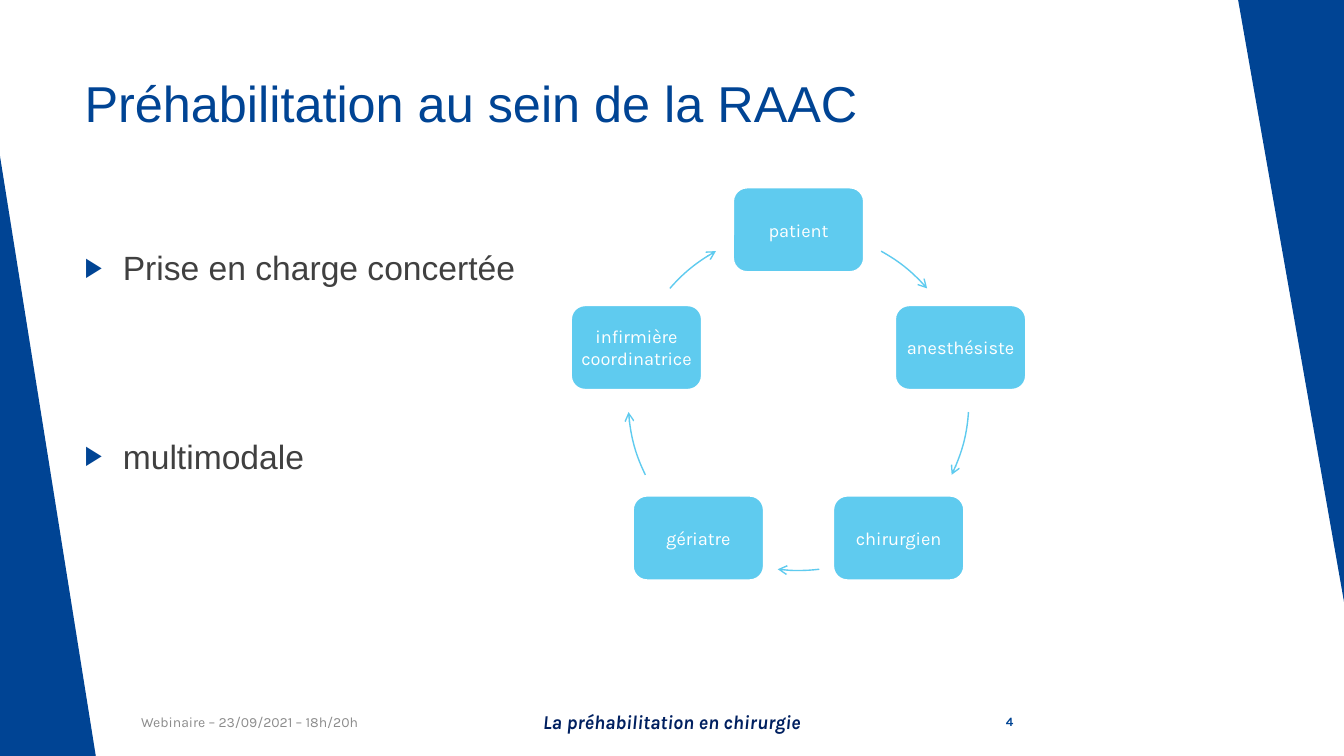
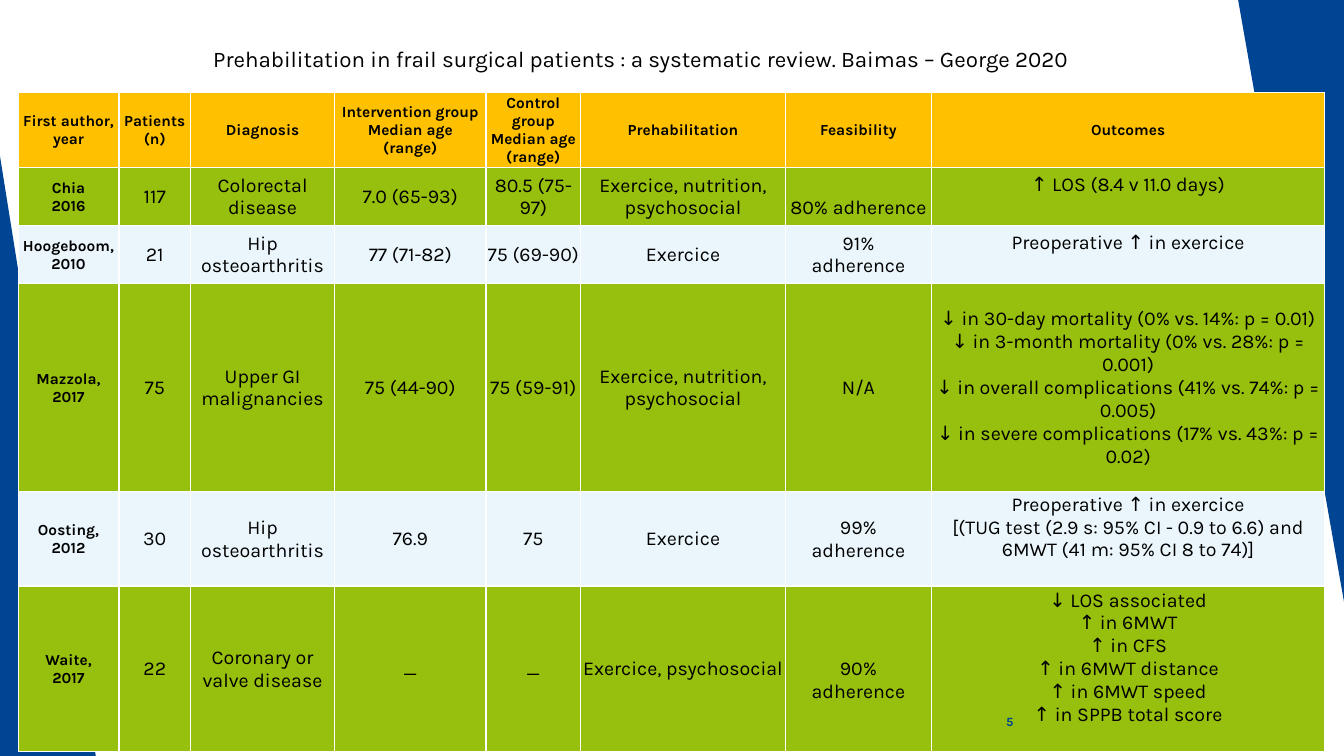
import math

import pptx
import pptx.dml.color
import pptx.enum.shapes
import pptx.enum.text
import pptx.oxml
import pptx.oxml.ns
import pptx.util

Inches = pptx.util.Inches
Pt = pptx.util.Pt
SHAPES = pptx.enum.shapes.MSO_SHAPE
ALIGN = pptx.enum.text.PP_ALIGN
ANCHOR = pptx.enum.text.MSO_ANCHOR

BLUE = "004494"
SKY = "5FCBEF"
WHITE = "FFFFFF"
BLACK = "000000"
AMBER = "FFC000"
GREEN = "97BF0D"
PALE = "EAF6FC"

TITLE = {"name": "Arial", "size": Pt(36), "colour": BLUE}
BULLET = {"name": "Arial", "size": Pt(24), "colour": "404040"}
PAGE = {"name": "Karla", "size": Pt(9), "bold": True, "colour": BLUE}
DATE = {"name": "Karla", "size": Pt(10), "colour": "8C8C8C"}
EVENT = {"name": "Karla", "size": Pt(14), "bold": True, "italic": True, "colour": "002060"}
NODE = {"name": "Karla", "size": Pt(13), "colour": WHITE}
CITATION = {"name": "Karla", "size": Pt(16), "colour": BLACK}
LABEL = {"name": "Karla", "size": Pt(11), "bold": True, "colour": BLACK}
VALUE = {"name": "Karla", "size": Pt(14), "bold": False, "colour": BLACK}

FOOTER_TOP = 6.96
FOOTER_HEIGHT = 0.4
CYCLE_CENTRE = (7.92, 3.97)
CYCLE_RADIUS = 1.69
NODE_SIZE = (1.3, 0.84)
TEAM = ["patient", "anesthésiste", "chirurgien", "gériatre", "infirmière coordinatrice"]
ARROW_ANGLES = [(299, 319), (4, 26), (83, 97), (154, 176), (221, 241)]

COLUMN_WIDTHS = [1, 0.71, 1.43, 1.5, 0.94, 2.03, 1.45, 3.9]
ROW_HEIGHTS = [0.72, 0.57, 0.58, 2.06, 0.93, 1.6]
STUDIES = [
    ["First author,\nyear", "Patients\n(n)", "Diagnosis",
     "Intervention group\nMedian age\n(range)", "Control group\nMedian age\n(range)",
     "Prehabilitation", "Feasibility", "Outcomes"],
    ["Chia\n2016", "117", "Colorectal disease", "7.0 (65-93)", "80.5 (75-97)",
     "Exercice, nutrition, psychosocial", "80% adherence", "↑ LOS (8.4 v 11.0 days)"],
    ["Hoogeboom, 2010", "21", "Hip osteoarthritis", "77 (71-82)", "75 (69-90)",
     "Exercice", "91%\nadherence", "Preoperative ↑ in exercice"],
    ["Mazzola,\n2017", "75", "Upper GI malignancies", "75 (44-90)", "75 (59-91)",
     "Exercice, nutrition, psychosocial", "N/A",
     "↓ in 30-day mortality (0% vs. 14%: p = 0.01)\n"
     "↓ in 3-month mortality (0% vs. 28%: p = 0.001)\n"
     "↓ in overall complications (41% vs. 74%: p = 0.005)\n"
     "↓ in severe complications (17% vs. 43%: p = 0.02)"],
    ["Oosting,\n2012", "30", "Hip osteoarthritis", "76.9", "75",
     "Exercice", "99%\nadherence",
     "Preoperative ↑ in exercice\n"
     "[(TUG test (2.9 s: 95% CI - 0.9 to 6.6) and 6MWT (41 m: 95% CI 8 to 74)]"],
    ["Waite,\n2017", "22", "Coronary or valve disease", "_", "_",
     "Exercice, psychosocial", "90%\nadherence",
     "↓ LOS associated\n↑ in 6MWT\n↑ in CFS\n↑ in 6MWT distance\n"
     "↑ in 6MWT speed\n↑ in SPPB total score"],
]
LINE_GAP = 0.23
SHIFTED_DOWN = [(1, 6), (5, 6)]
SHIFTED_UP = [(1, 7), (2, 7), (4, 7), (5, 7)]


def rgb(colour):
    return pptx.dml.color.RGBColor.from_string(colour)


def add_xml(parent, tag, content="", **attributes):
    listed = "".join(f' {key}="{value}"' for key, value in attributes.items())
    namespace = pptx.oxml.ns.nsdecls("a")
    parent.append(pptx.oxml.parse_xml(f"<a:{tag} {namespace}{listed}>{content}</a:{tag}>"))


def set_all(target, values):
    for name, value in values.items():
        if name == "colour":
            target.color.rgb = rgb(value)
        else:
            setattr(target, name, value)


def write(frame, text, style, align):
    for index, line in enumerate(text.split("\n")):
        paragraph = frame.paragraphs[0] if index == 0 else frame.add_paragraph()
        paragraph.alignment = align
        run = paragraph.add_run()
        run.text = line
        set_all(run.font, style)


def add_text(slide, box, text, style, align=ALIGN.LEFT, anchor=ANCHOR.MIDDLE):
    frame = slide.shapes.add_textbox(*map(Inches, box)).text_frame
    set_all(frame, {"word_wrap": True, "vertical_anchor": anchor})
    write(frame, text, style, align)
    return frame


def add_block(slide, preset, box, colour):
    block = slide.shapes.add_shape(preset, *map(Inches, box))
    block.shadow.inherit = False
    block.fill.solid()
    block.fill.fore_color.rgb = rgb(colour)
    block.line.fill.background()
    return block


def add_filled_text(slide, preset, box, colour, text, style, margin):
    block = add_block(slide, preset, box, colour)
    sides = ("margin_left", "margin_right", "margin_top", "margin_bottom")
    set_all(block.text_frame, dict.fromkeys(sides, Inches(margin)))
    set_all(block.text_frame, {"word_wrap": True, "vertical_anchor": ANCHOR.MIDDLE})
    write(block.text_frame, text, style, ALIGN.CENTER)
    return block


def add_branded_slide(deck):
    slide = deck.slides.add_slide(deck.slide_layouts[6])
    add_block(slide, SHAPES.RIGHT_TRIANGLE, (0, 1.55, 0.95, 5.95), BLUE)
    add_block(slide, SHAPES.RIGHT_TRIANGLE, (12.28, 0, 1.05, 5.97), BLUE).rotation = 180
    return slide


def add_page_number(slide, number):
    add_text(slide, (9.4, FOOTER_TOP, 0.75, FOOTER_HEIGHT), str(number), PAGE, ALIGN.RIGHT)


def add_bullets(slide, box, text, gap):
    frame = add_text(slide, box, text, BULLET, anchor=ANCHOR.TOP)
    for index, paragraph in enumerate(frame.paragraphs):
        properties = paragraph._p.get_or_add_pPr()
        properties.set("marL", str(Inches(0.38)))
        properties.set("indent", str(-Inches(0.38)))
        add_xml(properties, "buClr", f'<a:srgbClr val="{BLUE}"/>')
        add_xml(properties, "buSzPct", val=80000)
        add_xml(properties, "buFont", typeface="Arial")
        add_xml(properties, "buChar", char="▶")
        if index:
            paragraph.space_before = Pt(gap)


def add_arc_arrow(slide, start, end):
    x, y = CYCLE_CENTRE
    side = 2 * CYCLE_RADIUS
    box = (x - CYCLE_RADIUS, y - CYCLE_RADIUS, side, side)
    arrow = slide.shapes.add_shape(SHAPES.ARC, *map(Inches, box))
    arrow.shadow.inherit = False
    arrow.fill.background()
    for index, degrees in enumerate((start, end)):
        arrow.adjustments[index] = degrees * 0.6
    set_all(arrow.line, {"colour": SKY, "width": Pt(1)})
    add_xml(arrow.line._get_or_add_ln(), "tailEnd", type="arrow")


def add_cycle(slide):
    width, height = NODE_SIZE
    for index, (member, angles) in enumerate(zip(TEAM, ARROW_ANGLES)):
        turn = math.radians(360 / len(TEAM) * index - 90)
        left = CYCLE_CENTRE[0] + CYCLE_RADIUS * math.cos(turn) - width / 2
        top = CYCLE_CENTRE[1] + CYCLE_RADIUS * math.sin(turn) - height / 2
        node = add_filled_text(slide, SHAPES.ROUNDED_RECTANGLE, (left, top, width, height),
                               SKY, member, NODE, 0.05)
        set_all(node.line, {"colour": WHITE, "width": Pt(1.5)})
        add_arc_arrow(slide, *angles)


def fill_cell(cell, row, column, text):
    set_all(cell, {
        "vertical_anchor": ANCHOR.MIDDLE,
        "margin_left": Inches(0.01),
        "margin_right": Inches(0.01),
        "margin_top": Inches(LINE_GAP if (row, column) in SHIFTED_DOWN else 0.01),
        "margin_bottom": Inches(LINE_GAP if (row, column) in SHIFTED_UP else 0),
    })
    for side in ("lnL", "lnR", "lnT", "lnB"):
        add_xml(cell._tc.get_or_add_tcPr(), side,
                f'<a:solidFill><a:srgbClr val="{WHITE}"/></a:solidFill>', w=Pt(1))
    cell.fill.solid()
    band = GREEN if row % 2 else PALE
    cell.fill.fore_color.rgb = rgb(AMBER if row == 0 else band)
    style = LABEL if row == 0 or column == 0 else VALUE
    write(cell.text_frame, text, style, ALIGN.CENTER)


def add_study_table(slide):
    box = (0.18, 0.92, sum(COLUMN_WIDTHS), sum(ROW_HEIGHTS))
    table = slide.shapes.add_table(len(ROW_HEIGHTS), len(COLUMN_WIDTHS),
                                   *map(Inches, box)).table
    table.horz_banding = False
    for column, width in zip(table.columns, COLUMN_WIDTHS):
        column.width = Inches(width)
    for row, height in enumerate(ROW_HEIGHTS):
        table.rows[row].height = Inches(height)
        for column, text in enumerate(STUDIES[row]):
            fill_cell(table.cell(row, column), row, column, text)


def build_pathway_slide(deck):
    slide = add_branded_slide(deck)
    add_text(slide, (0.74, 0.67, 9.4, 1.44), "Préhabilitation au sein de la RAAC",
             TITLE, anchor=ANCHOR.TOP)
    add_bullets(slide, (0.74, 2.4, 4.8, 2.6), "Prise en charge concertée\nmultimodale", 106)
    add_page_number(slide, 4)
    add_text(slide, (1.03, FOOTER_TOP, 2.89, FOOTER_HEIGHT),
             "Webinaire – 23/09/2021 – 18h/20h", DATE, ALIGN.CENTER)
    add_text(slide, (4.2, FOOTER_TOP, 4.93, FOOTER_HEIGHT),
             "La préhabilitation en chirurgie", EVENT, ALIGN.CENTER)
    add_cycle(slide)


def build_review_slide(deck):
    slide = add_branded_slide(deck)
    add_study_table(slide)
    add_page_number(slide, 5)
    add_filled_text(slide, SHAPES.RECTANGLE, (2.01, 0.38, 8.69, 0.4), WHITE,
                    "Prehabilitation in frail surgical patients : a systematic review. "
                    "Baimas – George 2020", CITATION, 0.05)


def main():
    deck = pptx.Presentation()
    set_all(deck, {"slide_width": Inches(13.33), "slide_height": Inches(7.5)})
    build_pathway_slide(deck)
    build_review_slide(deck)
    deck.save("out.pptx")


if __name__ == "__main__":
    main()
